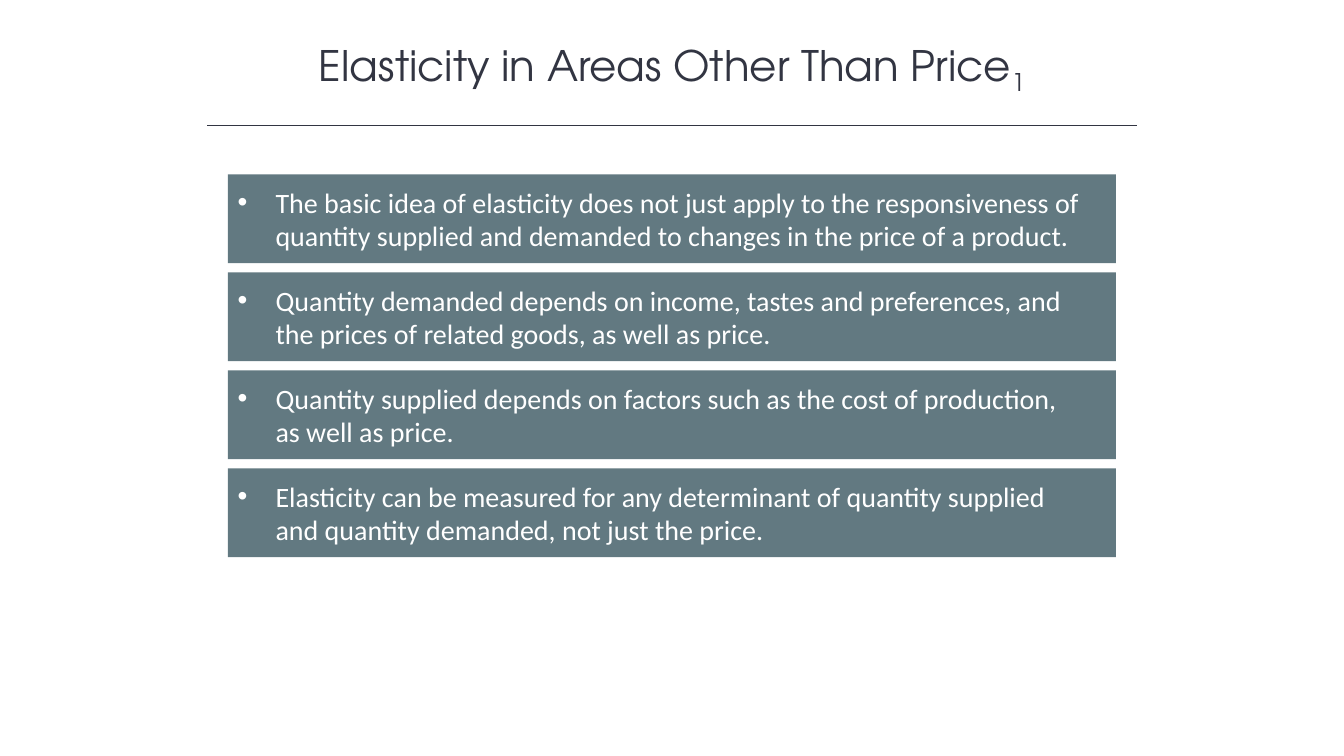
"""Build a slide on elasticity in areas other than price."""
from dataclasses import dataclass

from lxml.etree import SubElement
from pptx import Presentation
from pptx.dml.color import RGBColor
from pptx.enum.shapes import MSO_CONNECTOR as Connector, MSO_SHAPE as Shape
from pptx.enum.text import MSO_ANCHOR as Anchor, PP_ALIGN as Align
from pptx.oxml.ns import qn
from pptx.util import Pt


@dataclass(frozen=True)
class Theme:
    ink: RGBColor = RGBColor.from_string("323542")
    panel: RGBColor = RGBColor.from_string("627981")
    paper: RGBColor = RGBColor.from_string("FFFFFF")
    title_font: str = "TeX Gyre Adventor"
    body_font: str = "Calibri"
    title_size: int = 30
    body_size: int = 20


def add_span(para, text, *, font, size, color, baseline=None):
    span = para.add_run()
    span.text = text
    span.font.name = font
    span.font.size = Pt(size)
    span.font.color.rgb = color
    if baseline is not None:
        span._r.get_or_add_rPr().set("baseline", str(baseline * 1000))


theme = Theme()
deck = Presentation()
deck.slide_width, deck.slide_height = Pt(960), Pt(540)
page = deck.slides.add_slide(deck.slide_layouts[6])

title_box = page.shapes.add_textbox(Pt(120), Pt(26.6), Pt(720), Pt(44))
title_box.text_frame.word_wrap = True
title_box.text_frame.vertical_anchor = Anchor.MIDDLE
title = title_box.text_frame.paragraphs[0]
title.alignment = Align.CENTER
title_format = dict(font=theme.title_font, size=theme.title_size, color=theme.ink)
add_span(title, "Elasticity in Areas Other Than Price", **title_format)
add_span(title, "1", baseline=-25, **title_format)

rule = page.shapes.add_connector(Connector.STRAIGHT, Pt(148), Pt(89.5), Pt(812), Pt(89.5))
rule.line.color.rgb = theme.ink
rule.line.width = Pt(1)
SubElement(rule._element.spPr, qn("a:effectLst"))

points = [
    "The basic idea of elasticity does not just apply to the responsiveness of "
    "quantity supplied and demanded to changes in the price of a product.",
    "Quantity demanded depends on income, tastes and preferences, and the prices "
    "of related goods, as well as price.",
    "Quantity supplied depends on factors such as the cost of production, as well as price.",
    "Elasticity can be measured for any determinant of quantity supplied and "
    "quantity demanded, not just the price.",
]
panel_top, panel_pitch, bullet_indent = 124.5, 70, 27

for index, point in enumerate(points):
    top = panel_top + index * panel_pitch
    panel = page.shapes.add_shape(Shape.RECTANGLE, Pt(162.7), Pt(top), Pt(634.3), Pt(63.4))
    panel.shadow.inherit = False
    panel.fill.solid()
    panel.fill.fore_color.rgb = theme.panel
    panel.line.fill.background()

    frame = panel.text_frame
    frame.word_wrap = True
    frame.vertical_anchor = Anchor.MIDDLE
    frame.margin_right = Pt(24)
    para = frame.paragraphs[0]
    para.alignment = Align.LEFT
    properties = para._p.get_or_add_pPr()
    properties.set("marL", str(Pt(bullet_indent)))
    properties.set("indent", str(Pt(-bullet_indent)))
    SubElement(properties, qn("a:buFont"), typeface="Arial")
    SubElement(properties, qn("a:buChar"), char="•")
    add_span(para, point, font=theme.body_font, size=theme.body_size, color=theme.paper)

deck.save("out.pptx")
